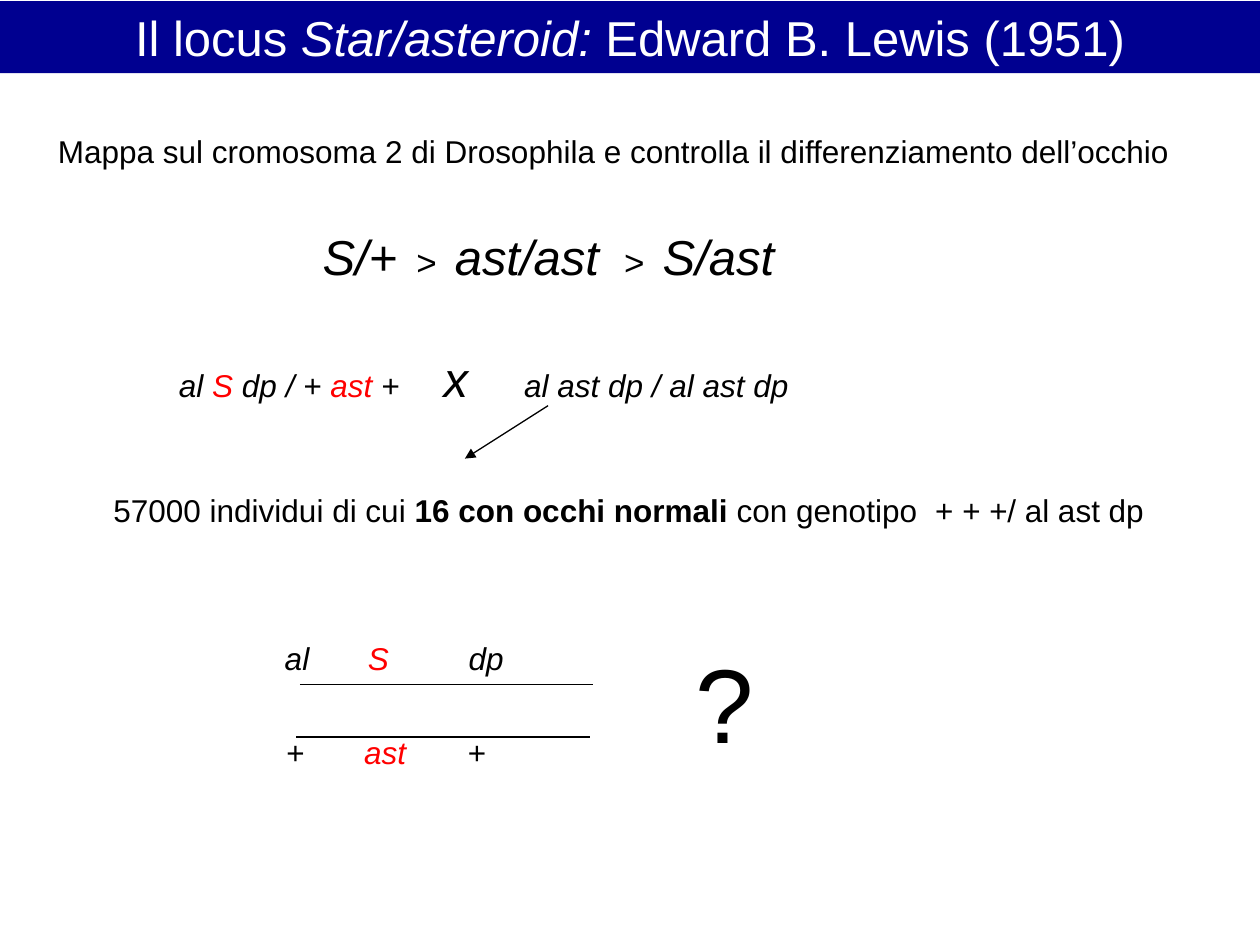
import pptx
import pptx.dml.color
import pptx.enum.shapes
import pptx.enum.text
import pptx.oxml
import pptx.oxml.ns
import pptx.util
from pptx.util import Inches

THEME = {
    "font": "Arial",
    "ink": "000000", "allele": "FF0000", "band": "000090", "paper": "FFFFFF",
    "text": 18, "sign": 20, "large": 28, "question": 60,
    "inset": 0.05, "line": 0.75,
}

# Spans are (text, style words); a style word is a size, a colour, "i" or "b".
TITLE = [("Il locus ", "large paper"), ("Star/asteroid: ", "large paper i"),
         ("Edward B. Lewis (1951)", "large paper")]
TITLE_BOX = (0, 0.01, 10, 0.57)

# Tab stops are inches from the left edge of the text.
TEXTS = [
    {"box": (0.41, 1, 9.34, 0.4), "before": 0, "tabs": [],
     "spans": [("Mappa sul cromosoma 2 di Drosophila e controlla il "
                "differenziamento dell’occhio", "text")]},
    {"box": (2.01, 1.75, 5.19, 0.57), "before": 16,
     "tabs": [0.5, 1.24, 1.55, 2.89, 3.2],
     "spans": [("\t", "sign i"), ("S/+", "large i"), ("\t>\t", "sign i"),
               ("ast/ast", "large i"), ("\t>\t", "sign i"),
               ("S/ast", "large i")]},
    {"box": (1.37, 2.72, 7.42, 0.53), "before": 10, "tabs": [2.1, 2.74],
     "spans": [("al ", "text i"), ("S", "text allele i"),
               (" dp / + ", "text i"), ("ast", "text allele i"),
               (" +\t", "text i"), ("x", "large i"),
               ("\tal ast dp / al ast dp", "text i")]},
    {"box": (0.85, 3.85, 8.62, 0.4), "before": 10, "tabs": [],
     "spans": [("57000 individui di cui ", "text"),
               ("16 con occhi normali ", "text b"),
               ("con genotipo  ", "text"), ("+ + +", "text i"),
               ("/ al ast dp", "text")]},
    {"box": (2.21, 5.02, 3.42, 0.38), "before": 10, "tabs": [0.66, 1.46],
     "spans": [("al\t", "text i"), ("S", "text allele i"),
               ("\tdp", "text i")]},
    {"box": (2.22, 5.77, 3.33, 0.38), "before": 10, "tabs": [0.62, 1.44],
     "spans": [("+\t", "text i"), ("ast", "text allele i"),
               ("\t+", "text i")]},
    {"box": (5.47, 5.02, 1, 1.03), "before": 36, "tabs": [],
     "spans": [("?", "question")]},
]

# (start, end, arrowhead at the end)
LINES = [
    ((4.35, 3.22), (3.69, 3.64), True),
    ((2.38, 5.43), (4.71, 5.43), False),
    ((2.35, 5.85), (4.68, 5.85), False),
]


def color(name):
    return pptx.dml.color.RGBColor.from_string(THEME[name])


def set_frame(frame, anchor):
    frame.word_wrap = True
    frame.auto_size = pptx.enum.text.MSO_AUTO_SIZE.NONE
    frame.vertical_anchor = anchor
    for side in ("left", "top", "right", "bottom"):
        setattr(frame, "margin_" + side, Inches(THEME["inset"]))


def write_spans(para, spans):
    for text, style in spans:
        words = style.split()
        span = para.add_run()
        span.text = text
        span.font.name = THEME["font"]
        span.font.size = pptx.util.Pt(THEME[words[0]])
        span.font.italic = "i" in words
        span.font.bold = "b" in words
        ink = next((w for w in words if w in ("paper", "allele")), "ink")
        span.font.color.rgb = color(ink)


def set_tabs(para, stops):
    if not stops:
        return
    tabs = pptx.oxml.parse_xml(
        "<a:tabLst %s/>" % pptx.oxml.ns.nsdecls("a"))
    for stop in stops:
        tabs.append(pptx.oxml.parse_xml(
            '<a:tab %s pos="%d" algn="l"/>'
            % (pptx.oxml.ns.nsdecls("a"), Inches(stop))))
    para._p.get_or_add_pPr().append(tabs)


def add_title(page):
    title = page.shapes.title
    title.left, title.top, title.width, title.height = map(Inches, TITLE_BOX)
    title.fill.solid()
    title.fill.fore_color.rgb = color("band")
    set_frame(title.text_frame, pptx.enum.text.MSO_ANCHOR.MIDDLE)
    para = title.text_frame.paragraphs[0]
    para.alignment = pptx.enum.text.PP_ALIGN.CENTER
    write_spans(para, TITLE)


def add_text(page, item):
    box = page.shapes.add_textbox(*map(Inches, item["box"]))
    set_frame(box.text_frame, pptx.enum.text.MSO_ANCHOR.TOP)
    para = box.text_frame.paragraphs[0]
    para.space_before = pptx.util.Pt(item["before"])
    set_tabs(para, item["tabs"])
    write_spans(para, item["spans"])


def add_line(page, start, end, arrow):
    line = page.shapes.add_connector(
        pptx.enum.shapes.MSO_CONNECTOR.STRAIGHT, *map(Inches, start + end))
    line.line.color.rgb = color("ink")
    line.line.width = pptx.util.Pt(THEME["line"])
    if arrow:
        line.line._get_or_add_ln().append(pptx.oxml.parse_xml(
            '<a:tailEnd %s type="triangle"/>' % pptx.oxml.ns.nsdecls("a")))
    line._element.spPr.append(pptx.oxml.parse_xml(
        "<a:effectLst %s/>" % pptx.oxml.ns.nsdecls("a")))


def main():
    deck = pptx.Presentation()
    deck.slide_width, deck.slide_height = Inches(10), Inches(7.5)
    page = deck.slides.add_slide(deck.slide_layouts.get_by_name("Title Only"))
    add_title(page)
    for item in TEXTS:
        add_text(page, item)
    for start, end, arrow in LINES:
        add_line(page, start, end, arrow)
    deck.save("out.pptx")


if __name__ == "__main__":
    main()
